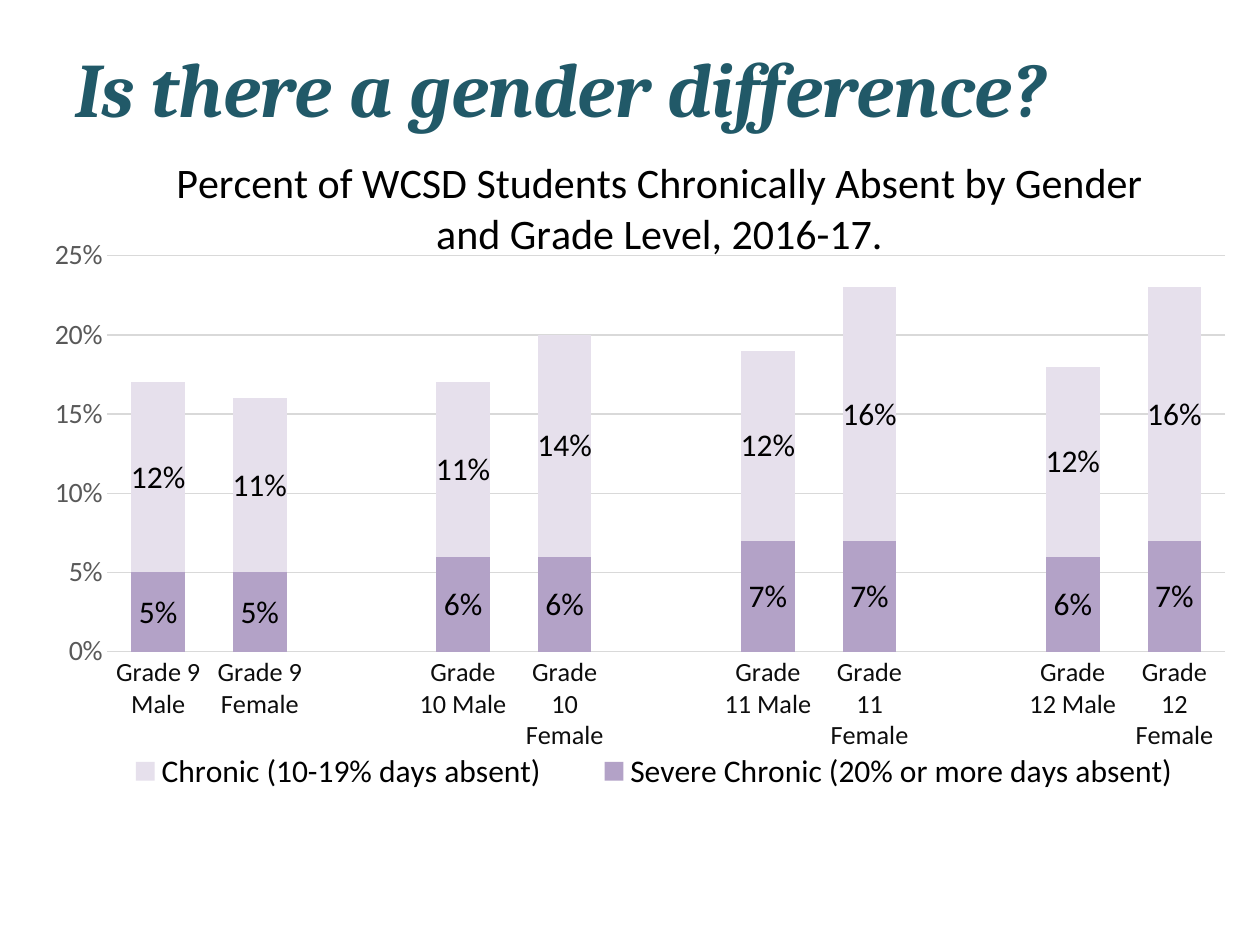
"""Build a slide with a stacked column chart of chronic absence by gender and grade."""
from dataclasses import dataclass
from typing import Optional

import pptx
import pptx.chart.data
import pptx.dml.color
import pptx.dml.line
import pptx.enum.chart
import pptx.enum.text
import pptx.oxml
import pptx.oxml.ns
import pptx.text.text
import pptx.util

Pt = pptx.util.Pt
COLORS = {
    "title": "215968",
    "text": "000000",
    "category": "0D0D0D",
    "value": "595959",
    "grid": "D9D9D9",
    "severe": "B3A2C7",
    "chronic": "E6E0EC",
}


@dataclass(frozen=True)
class Series:
    name: str
    color: str
    values: tuple[Optional[float], ...]


SERIES = (
    Series("Severe Chronic (20% or more days absent)", "severe",
           (0.05, 0.05, None, 0.06, 0.06, None, 0.07, 0.07, None, 0.06, 0.07)),
    Series("Chronic (10-19% days absent)", "chronic",
           (0.12, 0.11, None, 0.11, 0.14, None, 0.12, 0.16, None, 0.12, 0.16)),
)


def rgb(name: str) -> pptx.dml.color.RGBColor:
    return pptx.dml.color.RGBColor.from_string(COLORS[name])


def set_font(font: pptx.text.text.Font, size: float, color: str = "text",
             name: str = "Calibri", bold: bool = False, italic: bool = False) -> None:
    font.size = Pt(size)
    font.name = name
    font.bold = bold
    font.italic = italic
    font.color.rgb = rgb(color)


def write(tf: pptx.text.text.TextFrame, text: str,
          align: pptx.enum.text.PP_ALIGN = pptx.enum.text.PP_ALIGN.LEFT, **fmt) -> None:
    p = tf.paragraphs[0]
    p.alignment = align
    r = p.add_run()
    r.text = text
    set_font(r.font, **fmt)


def set_line(line: pptx.dml.line.LineFormat) -> None:
    line.color.rgb = rgb("grid")
    line.width = Pt(0.75)


def set_layout(element, **fractions: float) -> None:
    for old in element.findall(pptx.oxml.ns.qn("c:layout")):
        element.remove(old)
    target = '<c:layoutTarget val="inner"/>' if element.tag.endswith("plotArea") else ""
    modes = "".join(f'<c:{k}Mode val="edge"/>' for k in "xy")
    sizes = "".join(f'<c:{k} val="{v}"/>' for k, v in fractions.items())
    layout = pptx.oxml.parse_xml(
        f'<c:layout {pptx.oxml.ns.nsdecls("c")}><c:manualLayout>'
        f"{target}{modes}{sizes}</c:manualLayout></c:layout>")
    leading = ("c:tx", "c:legendPos", "c:legendEntry")
    tags = {pptx.oxml.ns.qn(tag) for tag in leading}
    element.insert(sum(child.tag in tags for child in element), layout)


def add_title(s) -> None:
    sp = s.shapes.add_textbox(Pt(36), Pt(21.6), Pt(648), Pt(56.16))
    tf = sp.text_frame
    tf.word_wrap = True
    tf.vertical_anchor = pptx.enum.text.MSO_ANCHOR.MIDDLE
    write(tf, "Is there a gender difference?", size=44, color="title",
          name="Cambria", bold=True, italic=True)


def style_axes(chart) -> None:
    cat, val = chart.category_axis, chart.value_axis
    for axis in (cat, val):
        axis.major_tick_mark = pptx.enum.chart.XL_TICK_MARK.NONE
        axis.minor_tick_mark = pptx.enum.chart.XL_TICK_MARK.NONE
    set_font(cat.tick_labels.font, size=15, color="category")
    set_line(cat.format.line)
    set_font(val.tick_labels.font, size=16, color="value")
    val.tick_labels.number_format = "0%"
    val.tick_labels.number_format_is_linked = False
    val.minimum_scale, val.maximum_scale, val.major_unit = 0, 0.25, 0.05
    val.format.line.fill.background()
    set_line(val.major_gridlines.format.line)


def style_series(plot_series, color: str) -> None:
    plot_series.format.fill.solid()
    plot_series.format.fill.fore_color.rgb = rgb(color)
    labels = plot_series.data_labels
    labels.show_value = True
    labels.number_format = "0%"
    labels.number_format_is_linked = False
    labels.position = pptx.enum.chart.XL_LABEL_POSITION.CENTER
    set_font(labels.font, size=18)


def add_chart(s) -> None:
    data = pptx.chart.data.CategoryChartData(number_format="0%")
    for grade in range(9, 13):
        if grade > 9:
            data.add_category("")
        for gender in ("Male", "Female"):
            data.add_category(f"Grade {grade} {gender}")
    for series in SERIES:
        data.add_series(series.name, series.values)
    chart = s.shapes.add_chart(
        pptx.enum.chart.XL_CHART_TYPE.COLUMN_STACKED,
        Pt(12.24), Pt(72), Pt(702), Pt(390.24), data).chart
    set_font(chart.font, size=10)

    write(chart.chart_title.text_frame,
          "Percent of WCSD Students Chronically Absent by Gender and Grade Level, 2016-17.",
          align=pptx.enum.text.PP_ALIGN.CENTER, size=24)
    chart.chart_title.include_in_layout = False
    set_layout(chart.chart_title._element, x=0.12, y=0.03)

    style_axes(chart)
    plot = chart.plots[0]
    plot.gap_width, plot.overlap, plot.vary_by_categories = 90, 100, False
    for plot_series, series in zip(plot.series, SERIES):
        style_series(plot_series, series.color)
    set_layout(chart._chartSpace.chart.plotArea, x=0.07, y=0.19, w=0.91, h=0.58)

    chart.has_legend = True
    chart.legend.position = pptx.enum.chart.XL_LEGEND_POSITION.RIGHT
    chart.legend.include_in_layout = False
    set_font(chart.legend.font, size=18)
    set_layout(chart.legend._element, x=0.05, y=0.91, w=0.93, h=0.07)


def main() -> None:
    prs = pptx.Presentation()
    prs.slide_width, prs.slide_height = Pt(720), Pt(540)
    s = prs.slides.add_slide(prs.slide_layouts[6])
    add_title(s)
    add_chart(s)
    prs.save("out.pptx")


if __name__ == "__main__":
    main()
